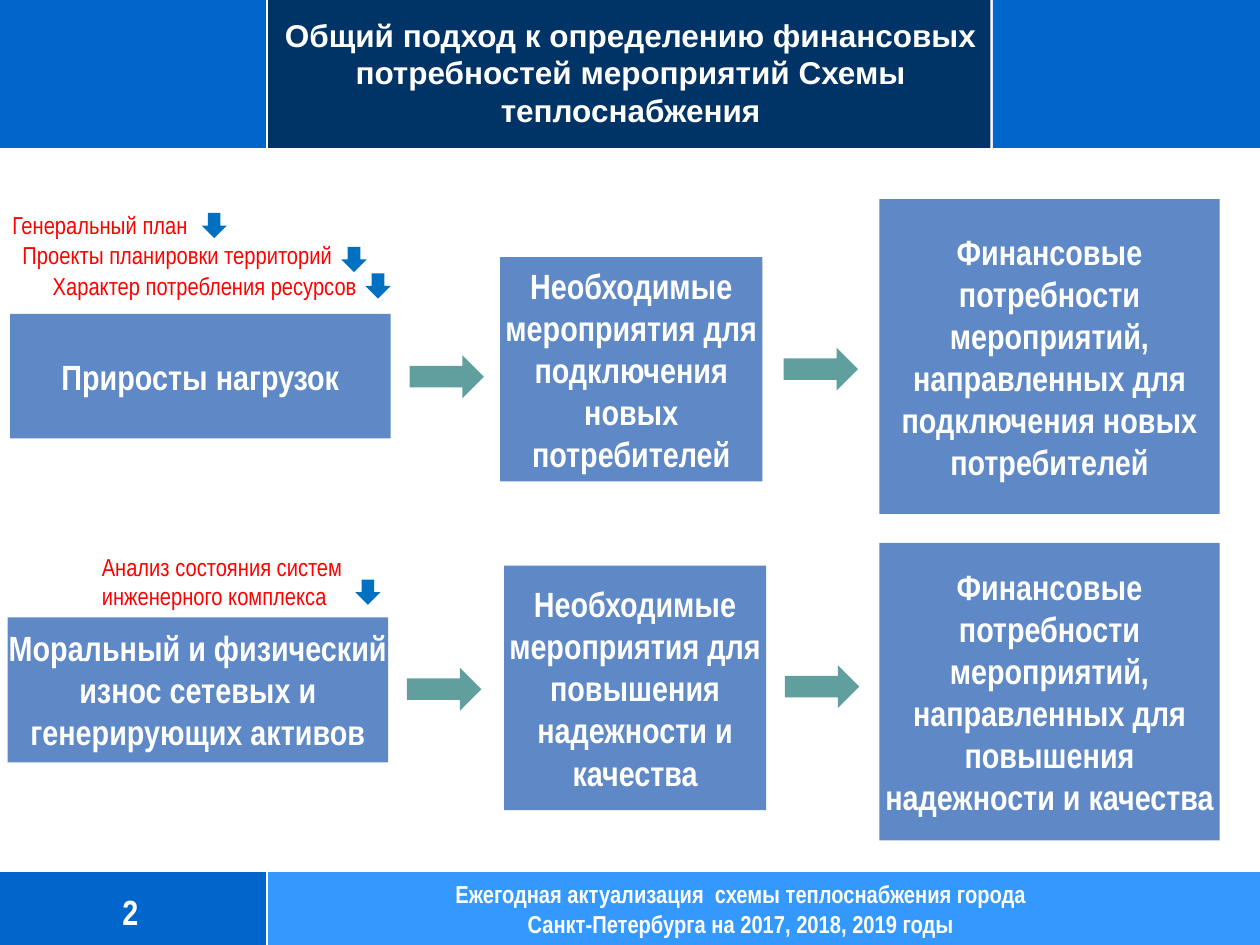
from lxml import etree
from pptx import Presentation
from pptx.dml.color import RGBColor
from pptx.enum.shapes import MSO_CONNECTOR, MSO_SHAPE
from pptx.enum.text import MSO_ANCHOR, MSO_AUTO_SIZE, PP_ALIGN
from pptx.oxml.ns import qn
from pptx.util import Inches, Pt

RECTANGLE = MSO_SHAPE.RECTANGLE
DOWN_ARROW = MSO_SHAPE.DOWN_ARROW
RIGHT_ARROW = MSO_SHAPE.RIGHT_ARROW
STRAIGHT = MSO_CONNECTOR.STRAIGHT
LEFT, CENTER = PP_ALIGN.LEFT, PP_ALIGN.CENTER
TOP, MIDDLE = MSO_ANCHOR.TOP, MSO_ANCHOR.MIDDLE
FIT_SHAPE = MSO_AUTO_SIZE.SHAPE_TO_FIT_TEXT

COLORS = {
    "white": "FFFFFF",
    "band": "0066CC",
    "title": "003366",
    "footer": "3399FF",
    "box": "5E88C6",
    "label": "FF0000",
    "input_arrow": "0070C0",
    "step_arrow": "619F9E",
}

SLIDE_WIDTH, SLIDE_HEIGHT = 10, 7.5
SIDE_WIDTH, TITLE_RIGHT = 2.12, 7.86
HEADER_HEIGHT, FOOTER_TOP = 1.18, 6.91
FOOTER_HEIGHT = SLIDE_HEIGHT - FOOTER_TOP


def color(name):
    return RGBColor.from_string(COLORS[name])


def write_text(shape, text, size=20, font="Arial Narrow", fill="white", bold=True,
               align=CENTER, anchor=MIDDLE, margin=None, wrap=True, fit=False):
    """Fill the shape with text, one paragraph for each line of it."""
    frame = shape.text_frame
    frame.text = text
    frame.word_wrap = wrap
    frame.vertical_anchor = anchor
    if fit:
        frame.auto_size = FIT_SHAPE
    if margin is not None:
        frame.margin_left = frame.margin_right = Inches(margin)
        frame.margin_top = frame.margin_bottom = Inches(margin)
    for paragraph in frame.paragraphs:
        paragraph.alignment = align
        paragraph.font.size = Pt(size)
        paragraph.font.name = font
        paragraph.font.bold = bold
        paragraph.font.color.rgb = color(fill)


class SlideBuilder:
    def __init__(self, slide):
        self.shapes = slide.shapes

    def block(self, left, top, width, height, fill, kind=RECTANGLE):
        shape = self.shapes.add_shape(
            kind, Inches(left), Inches(top), Inches(width), Inches(height))
        shape.shadow.inherit = False
        shape.fill.solid()
        shape.fill.fore_color.rgb = color(fill)
        shape.line.fill.background()
        return shape

    def divider(self, x1, y1, x2, y2):
        line = self.shapes.add_connector(
            STRAIGHT, Inches(x1), Inches(y1), Inches(x2), Inches(y2))
        line.line.color.rgb = color("white")
        line.line.width = Pt(1.25)
        etree.SubElement(line._element.spPr, qn("a:effectLst"))

    def text(self, left, top, width, height, text, **text_format):
        box = self.shapes.add_textbox(
            Inches(left), Inches(top), Inches(width), Inches(height))
        write_text(box, text, **text_format)

    def step_box(self, left, top, width, height, text):
        write_text(self.block(left, top, width, height, "box"), text, margin=0)

    def label(self, left, top, width, height, text):
        self.text(left, top, width, height, text, size=14, fill="label", bold=False,
                  align=LEFT, anchor=TOP, wrap=False, fit=True)

    def input_arrow(self, left, top):
        self.block(left, top, 0.2, 0.2, "input_arrow", DOWN_ARROW)

    def step_arrow(self, left, top):
        self.block(left, top, 0.59, 0.34, "step_arrow", RIGHT_ARROW)


def draw_frame(builder):
    """Draw the header and footer bands with their text."""
    right_band = TITLE_RIGHT + 0.02
    builder.block(0, 0, SIDE_WIDTH, HEADER_HEIGHT, "band")
    builder.block(SIDE_WIDTH, 0, TITLE_RIGHT - SIDE_WIDTH, HEADER_HEIGHT, "title")
    builder.block(right_band, 0, SLIDE_WIDTH - right_band, HEADER_HEIGHT, "band")
    builder.block(0, FOOTER_TOP, SIDE_WIDTH, FOOTER_HEIGHT, "band")
    builder.block(SIDE_WIDTH, FOOTER_TOP, SLIDE_WIDTH - SIDE_WIDTH, FOOTER_HEIGHT, "footer")
    builder.divider(SIDE_WIDTH, 0, SIDE_WIDTH, HEADER_HEIGHT)
    builder.divider(SIDE_WIDTH, FOOTER_TOP, SIDE_WIDTH, SLIDE_HEIGHT)
    for y in (HEADER_HEIGHT, FOOTER_TOP):
        builder.divider(0, y, SLIDE_WIDTH, y)

    builder.text(0.22, 6.97, 1.63, 0.52, "2", margin=0)
    builder.text(2.14, 0.16, 5.73, 0.83,
                 "Общий подход к определению финансовых потребностей "
                 "мероприятий Схемы теплоснабжения", size=18, font="Arial")
    builder.text(3.38, 6.93, 5, 0.57,
                 "Ежегодная актуализация  схемы теплоснабжения города\n"
                 "Санкт-Петербурга на 2017, 2018, 2019 годы",
                 size=14, anchor=TOP, fit=True)


def draw_flow(builder):
    """Draw the two chains: inputs, measures, financial needs."""
    needs = "Финансовые потребности мероприятий, направленных для "
    measures = "Необходимые мероприятия для "
    connection = "подключения новых потребителей"
    reliability = "повышения надежности и качества"

    boxes = [
        (0.08, 2.49, 3.02, 0.99, "Приросты нагрузок"),
        (3.97, 2.04, 2.08, 1.78, measures + connection),
        (6.98, 1.58, 2.7, 2.5, needs + connection),
        (0.06, 4.9, 3.02, 1.15,
         "Моральный и физический износ сетевых и генерирующих активов"),
        (4, 4.49, 2.08, 1.94, measures + reliability),
        (6.98, 4.31, 2.7, 2.36, needs + reliability),
    ]
    labels = [
        (0, 1.62, 1.62, 0.34, "Генеральный план"),
        (0.08, 1.86, 2.68, 0.34, "Проекты планировки территорий"),
        (0.32, 2.1, 2.65, 0.34, "Характер потребления ресурсов"),
        (0.71, 4.33, 2.17, 0.57, "Анализ состояния систем\nинженерного комплекса"),
    ]
    for box in boxes:
        builder.step_box(*box)
    for label in labels:
        builder.label(*label)
    for position in ((1.6, 1.69), (2.71, 1.96), (2.9, 2.17), (2.82, 4.6)):
        builder.input_arrow(*position)
    for position in ((3.25, 2.82), (6.22, 2.76), (3.23, 5.3), (6.23, 5.28)):
        builder.step_arrow(*position)


def main():
    presentation = Presentation()
    presentation.slide_width = Inches(SLIDE_WIDTH)
    presentation.slide_height = Inches(SLIDE_HEIGHT)
    slide = presentation.slides.add_slide(presentation.slide_layouts[6])
    builder = SlideBuilder(slide)
    draw_frame(builder)
    draw_flow(builder)
    presentation.save("out.pptx")


if __name__ == "__main__":
    main()
